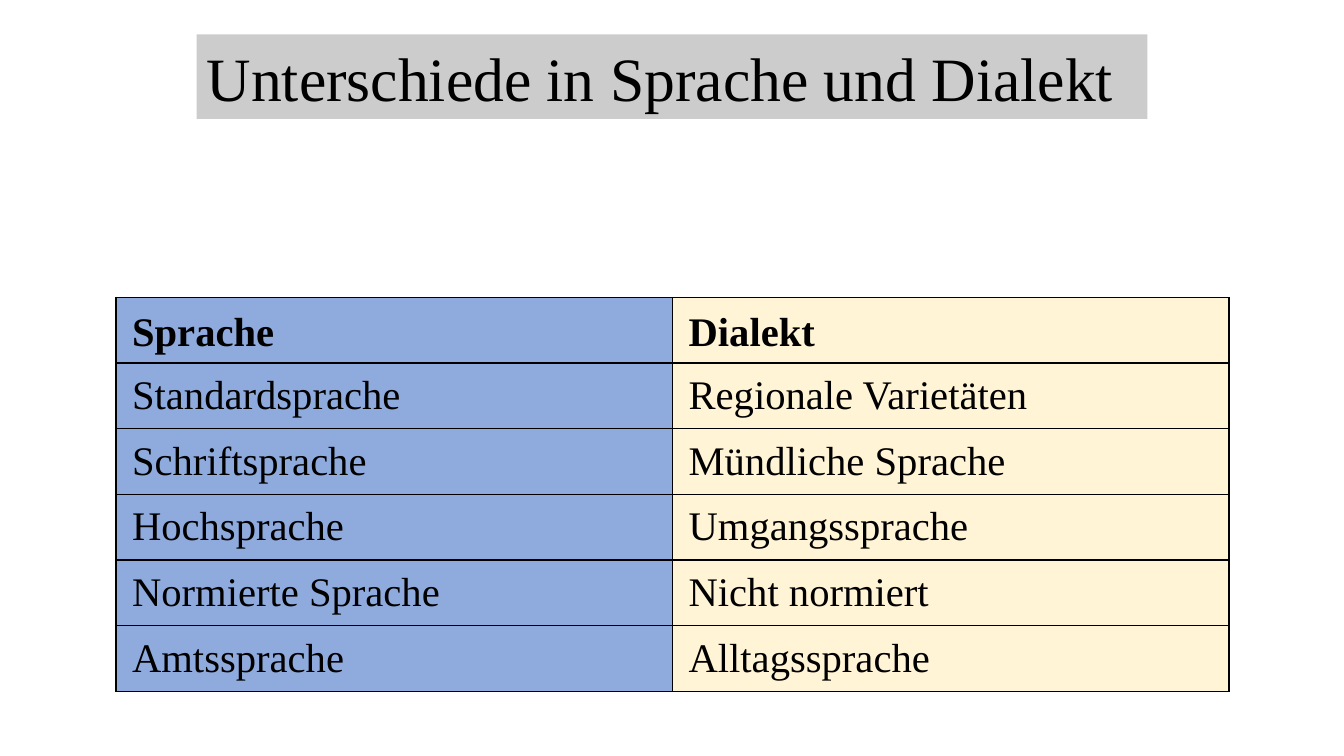
from lxml.etree import SubElement
from pptx import Presentation
from pptx.dml.color import RGBColor
from pptx.enum.text import MSO_ANCHOR, MSO_AUTO_SIZE, PP_ALIGN
from pptx.oxml.ns import qn
from pptx.util import Inches, Pt

COLORS = {"text": "000000", "sprache": "8FAADC", "dialekt": "FFF2CC"}
FONT = "Times New Roman"
ROWS = [
    ("Sprache", "Dialekt"),
    ("Standardsprache", "Regionale Varietäten"),
    ("Schriftsprache", "Mündliche Sprache"),
    ("Hochsprache", "Umgangssprache"),
    ("Normierte Sprache", "Nicht normiert"),
    ("Amtssprache", "Alltagssprache"),
]
COLUMN_FILLS = [("sprache", 100), ("dialekt", 82)]


def set_fill(fill, properties, color, opacity):
    """Fill an object with a colour at an opacity in percent."""
    fill.solid()
    fill.fore_color.rgb = RGBColor.from_string(COLORS[color])
    if opacity < 100:
        color_element = properties.find(qn("a:solidFill")).find(qn("a:srgbClr"))
        SubElement(color_element, qn("a:alpha"), val=str(opacity * 1000))


def set_font(paragraph, size, bold=False):
    """Format a whole paragraph in the slide font."""
    paragraph.alignment = PP_ALIGN.LEFT
    paragraph.font.name = FONT
    paragraph.font.size = Pt(size)
    paragraph.font.bold = bold
    paragraph.font.color.rgb = RGBColor.from_string(COLORS["text"])


def add_borders(cell_properties):
    """Draw a thin line on each side of a cell."""
    for index, side in enumerate(("lnL", "lnR", "lnT", "lnB")):
        line = SubElement(cell_properties, qn(f"a:{side}"), w=str(Pt(1)))
        fill = SubElement(line, qn("a:solidFill"))
        SubElement(fill, qn("a:srgbClr"), val=COLORS["text"])
        cell_properties.insert(index, line)


def format_title(slide, left, top, width, height):
    """Place the title on its grey band."""
    title = slide.shapes.title
    title.left, title.top = Inches(left), Inches(top)
    title.width, title.height = Inches(width), Inches(height)
    set_fill(title.fill, title.element.spPr, "text", 20)
    frame = title.text_frame
    frame.text = "Unterschiede in Sprache und Dialekt"
    frame.word_wrap = True
    frame.auto_size = MSO_AUTO_SIZE.NONE
    frame.vertical_anchor = MSO_ANCHOR.MIDDLE
    set_font(frame.paragraphs[0], 44)


def format_cell(cell, text, color, opacity, is_header):
    """Write and style one table cell."""
    cell.text = text
    cell.margin_left = cell.margin_right = Inches(0.16)
    cell.margin_top = cell.margin_bottom = Inches(0.08)
    cell.vertical_anchor = MSO_ANCHOR.BOTTOM if is_header else MSO_ANCHOR.MIDDLE
    set_font(cell.text_frame.paragraphs[0], 29, is_header)
    cell_properties = cell._tc.get_or_add_tcPr()
    set_fill(cell.fill, cell_properties, color, opacity)
    add_borders(cell_properties)


def add_comparison(slide, left, top, width, height):
    """Add the two-column comparison table."""
    table = slide.shapes.add_table(
        len(ROWS), len(COLUMN_FILLS),
        Inches(left), Inches(top), Inches(width), Inches(height),
    ).table
    table.horz_banding = False
    for row_index, texts in enumerate(ROWS):
        for column_index, text in enumerate(texts):
            color, opacity = COLUMN_FILLS[column_index]
            cell = table.cell(row_index, column_index)
            format_cell(cell, text, color, opacity, row_index == 0)


def main():
    """Build and save the presentation."""
    presentation = Presentation()
    presentation.slide_width = Inches(13.33)
    presentation.slide_height = Inches(7.5)
    slide = presentation.slides.add_slide(presentation.slide_layouts[5])
    format_title(slide, 1.95, 0.34, 9.43, 0.84)
    add_comparison(slide, 1.15, 2.95, 11.04, 3.91)
    presentation.save("out.pptx")


if __name__ == "__main__":
    main()
